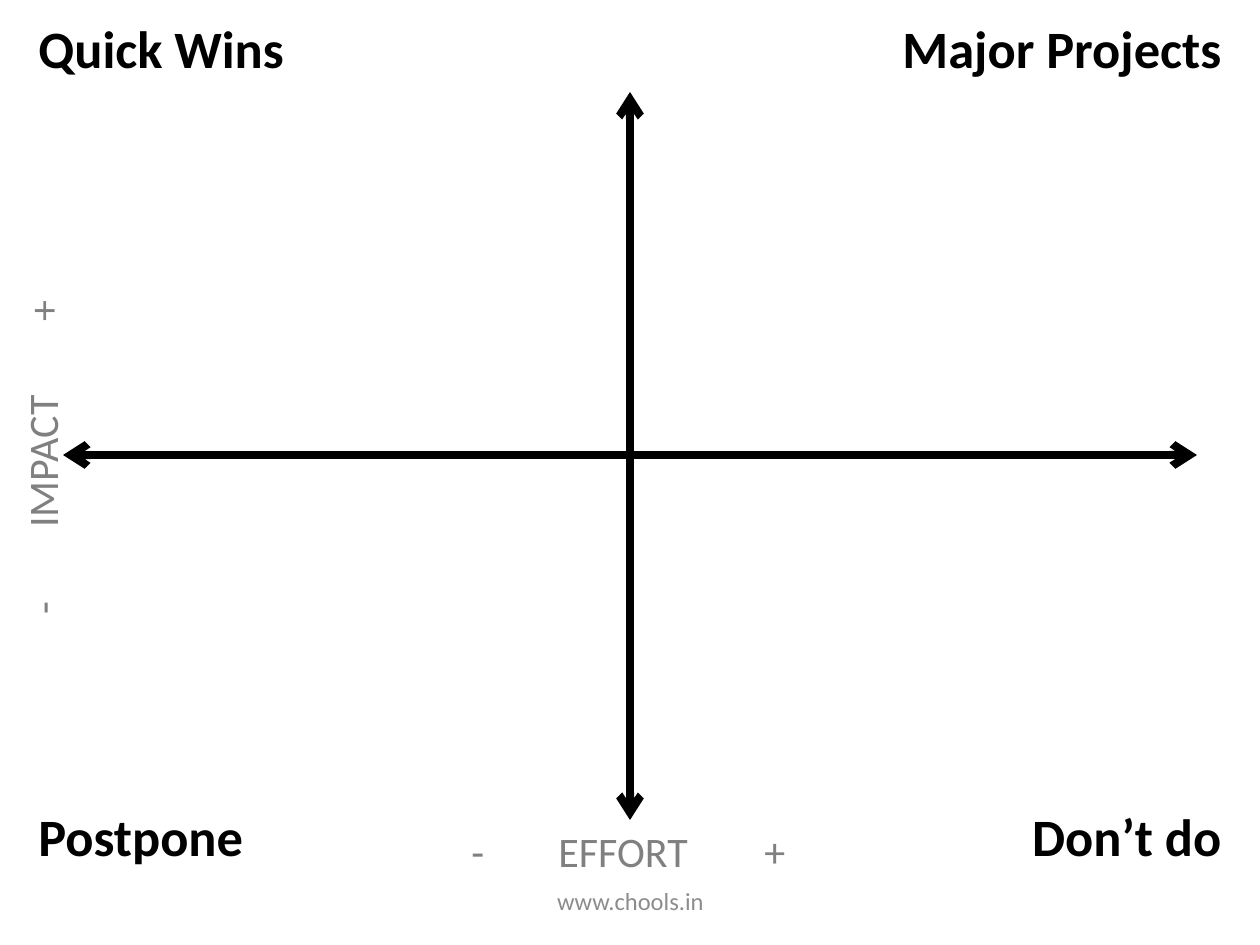
"""Build an impact and effort matrix slide."""
from dataclasses import dataclass

from lxml import etree
from pptx import Presentation
from pptx import util as u
from pptx.dml.color import RGBColor
from pptx.enum import shapes, text
from pptx.oxml.ns import qn

WIDTH, HEIGHT = 1260, 945
ALIGN = text.PP_ALIGN


def px(length):
    return u.Emu(round(length * 914400 / 126))


@dataclass(frozen=True)
class Theme:
    font: str = "Calibri"
    ink: str = "000000"
    label: str = "808080"
    footer: str = "8C8C8C"
    quadrant_size: int = 30
    label_size: int = 24
    footer_size: int = 14
    axis_width: float = 4.5


class MatrixSlide:
    def __init__(self, slide, theme):
        self.slide = slide
        self.theme = theme

    def textbox(self, words, box, size, color, align, wrap=True, bold=False,
                anchor=text.MSO_ANCHOR.TOP, tabs=()):
        shape = self.slide.shapes.add_textbox(*map(px, box))
        frame = shape.text_frame
        frame.word_wrap = wrap
        frame.vertical_anchor = anchor
        paragraph = frame.paragraphs[0]
        paragraph.text = words
        paragraph.alignment = align
        if tabs:
            tab_list = etree.SubElement(paragraph._p.get_or_add_pPr(), qn("a:tabLst"))
            for stop in tabs:
                etree.SubElement(tab_list, qn("a:tab"), pos=str(px(stop)), algn="l")
        font = paragraph.runs[0].font
        values = {"name": self.theme.font, "size": u.Pt(size), "bold": bold}
        for name, value in values.items():
            setattr(font, name, value)
        font.color.rgb = RGBColor.from_string(color)
        return shape

    def quadrant(self, words, top, width, right=False):
        margin = 26
        left = WIDTH - margin - width if right else margin
        align = ALIGN.RIGHT if right else ALIGN.LEFT
        self.textbox(words, (left, top, width, 77), self.theme.quadrant_size,
                     self.theme.ink, align, wrap=False, bold=True)

    def axis(self, start, end):
        connector = self.slide.shapes.add_connector(
            shapes.MSO_CONNECTOR.STRAIGHT, *map(px, start + end))
        connector.line.color.rgb = RGBColor.from_string(self.theme.ink)
        connector.line.width = u.Pt(self.theme.axis_width)
        line = connector.line._get_or_add_ln()
        for tag in ("a:headEnd", "a:tailEnd"):
            etree.SubElement(line, qn(tag), type="arrow")
        etree.SubElement(connector._element.spPr, qn("a:effectLst"))

    def axis_label(self, name, box, rotation=0):
        shape = self.textbox(f"-\t{name}\t+", box, self.theme.label_size,
                             self.theme.label, ALIGN.LEFT, tabs=(87, 293))
        shape.rotation = rotation

    def footer(self, words, box):
        self.textbox(words, box, self.theme.footer_size, self.theme.footer,
                     ALIGN.CENTER, anchor=text.MSO_ANCHOR.MIDDLE)


def main():
    presentation = Presentation()
    presentation.slide_width, presentation.slide_height = px(WIDTH), px(HEIGHT)
    slide = presentation.slides.add_slide(presentation.slide_layouts[6])
    matrix = MatrixSlide(slide, Theme())

    matrix.axis((1197, 455), (63, 455))
    matrix.quadrant("Don’t do", 798, 215, right=True)
    matrix.quadrant("Postpone", 798, 233)
    matrix.quadrant("Major Projects", 10, 348, right=True)
    matrix.quadrant("Quick Wins", 10, 273)
    matrix.axis((630, 92), (630, 820))
    matrix.axis_label("EFFORT", (459, 819, 343, 63))
    matrix.axis_label("IMPACT", (-131, 423, 345, 63), rotation=270)
    matrix.footer("www.chools.in", (431, 876, 399, 50))

    presentation.save("out.pptx")


if __name__ == "__main__":
    main()
